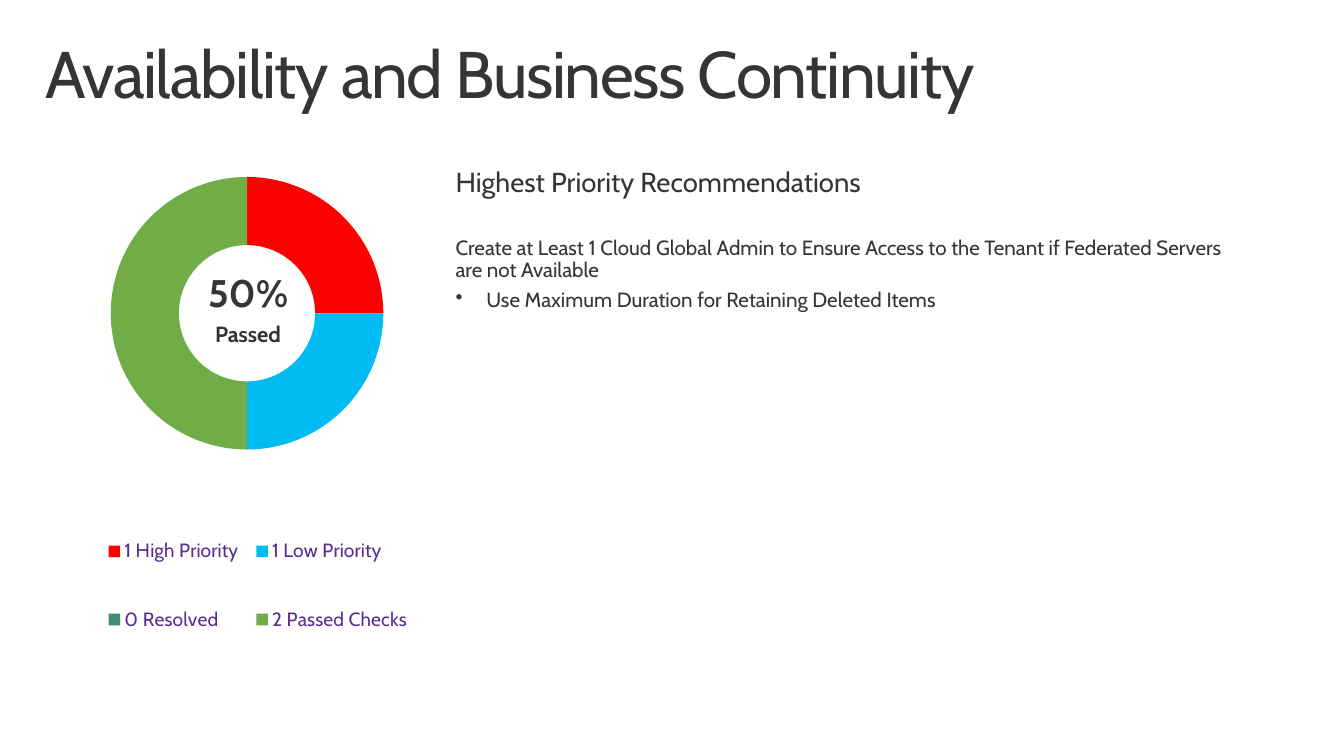
import pptx
import pptx.chart.data
import pptx.dml.color
import pptx.enum.chart
import pptx.enum.text
import pptx.oxml
import pptx.oxml.ns
import pptx.util

Cm = pptx.util.Cm
Pt = pptx.util.Pt
ALIGN = pptx.enum.text.PP_ALIGN

THEME = {
    "font": "Cabin",
    "text": "353535",
    "legend": "5B2D91",
    "slices": ["FF0000", "001D49", "00BCF2", "A3008F", "458B74", "D1D1D1", "70AD47"],
    "title_size": 48,
    "percent_size": 28,
    "heading_size": 20,
    "passed_size": 16,
    "body_size": 15,
    "legend_size": 14,
    "chart_size": 10,
}


def rgb(value):
    return pptx.dml.color.RGBColor.from_string(value)


def write_paragraph(frame, text, size, bold=False, align=ALIGN.LEFT, after=6, spacing=0, bullet=False):
    paragraph = frame.paragraphs[-1]
    if paragraph.runs:
        paragraph = frame.add_paragraph()
    paragraph.alignment = align
    paragraph.line_spacing = 0.9
    paragraph.space_before = Pt(0)
    paragraph.space_after = Pt(after)
    run = paragraph.add_run()
    run.text = text
    run.font.name = THEME["font"]
    run.font.size = Pt(size)
    run.font.bold = bold
    run.font.color.rgb = rgb(THEME["text"])
    if spacing:
        run.font._element.set("spc", str(spacing))
    if bullet:
        properties = paragraph._p.get_or_add_pPr()
        properties.set("marL", str(Cm(0.79)))
        properties.set("indent", str(-Cm(0.79)))
        mark = properties.makeelement(pptx.oxml.ns.qn("a:buChar"), {"char": "•"})
        properties.append(mark)


presentation = pptx.Presentation()
presentation.slide_width = Cm(34.54)
presentation.slide_height = Cm(19.43)
slide = presentation.slides.add_slide(presentation.slide_layouts[5])

title = slide.shapes.title
title.left, title.top, title.width, title.height = Cm(0.76), Cm(0.81), Cm(33.02), Cm(2.54)
title_frame = title.text_frame
title_frame.margin_left = title_frame.margin_right = Cm(0.41)
title_frame.margin_top = title_frame.margin_bottom = Cm(0.25)
title_frame.vertical_anchor = pptx.enum.text.MSO_ANCHOR.TOP
title_frame.auto_size = pptx.enum.text.MSO_AUTO_SIZE.NONE
write_paragraph(title_frame, "Availability and Business Continuity",
                size=THEME["title_size"], after=0, spacing=-100)

chart_data = pptx.chart.data.CategoryChartData()
chart_data.categories = ["1 High Priority ", "", "1 Low Priority", "", "0 Resolved", "", "2 Passed Checks"]
chart_data.add_series("Series 1", [25, None, 25, None, 0, None, 50])
chart = slide.shapes.add_chart(
    pptx.enum.chart.XL_CHART_TYPE.DOUGHNUT,
    Cm(0), Cm(2.79), Cm(12.27), Cm(14.91), chart_data).chart
chart.has_title = False
chart.font.name = THEME["font"]
chart.font.size = Pt(THEME["chart_size"])
chart.font.color.rgb = rgb(THEME["text"])

for index, color in enumerate(THEME["slices"]):
    point_format = chart.plots[0].series[0].points[index].format
    point_format.fill.solid()
    point_format.fill.fore_color.rgb = rgb(color)
    point_format.line.fill.background()
chart._chartSpace.find(".//" + pptx.oxml.ns.qn("c:holeSize")).set("val", "68")

chart.has_legend = True
legend = chart.legend
legend.position = pptx.enum.chart.XL_LEGEND_POSITION.BOTTOM
legend.include_in_layout = False
legend.font.name = THEME["font"]
legend.font.size = Pt(THEME["legend_size"])
legend.font.color.rgb = rgb(THEME["legend"])

namespace = pptx.oxml.ns.nsdecls("c")
legend_position = legend._element.find(pptx.oxml.ns.qn("c:legendPos"))
for index in (5, 3, 1):
    legend_position.addnext(pptx.oxml.parse_xml(
        f'<c:legendEntry {namespace}><c:idx val="{index}"/><c:delete val="1"/></c:legendEntry>'))

plot_area = chart._chartSpace.chart.plotArea
layouts = [
    (plot_area, 0, '<c:layoutTarget val="inner"/>', (0.232, 0.074, 0.571, 0.558)),
    (legend._element, 4, "", (0.213, 0.666, 0.655, 0.312)),
]
for parent, position, target, (x, y, width, height) in layouts:
    for old_layout in parent.findall(pptx.oxml.ns.qn("c:layout")):
        parent.remove(old_layout)
    parent.insert(position, pptx.oxml.parse_xml(
        f'<c:layout {namespace}><c:manualLayout>{target}'
        f'<c:xMode val="edge"/><c:yMode val="edge"/>'
        f'<c:x val="{x}"/><c:y val="{y}"/><c:w val="{width}"/><c:h val="{height}"/>'
        f'</c:manualLayout></c:layout>'))

text_frames = []
for left, top, width, height in [(4.57, 6.63, 3.61, 8.1), (11.2, 3.94, 21.36, 3.18)]:
    frame = slide.shapes.add_textbox(Cm(left), Cm(top), Cm(width), Cm(height)).text_frame
    frame.word_wrap = True
    frame.margin_left = frame.margin_right = Cm(0.51)
    frame.margin_top = frame.margin_bottom = Cm(0.41)
    text_frames.append(frame)
score_frame, advice_frame = text_frames

write_paragraph(score_frame, "50%", size=THEME["percent_size"], bold=True, align=ALIGN.CENTER)
write_paragraph(score_frame, "Passed", size=THEME["passed_size"], bold=True, align=ALIGN.CENTER)

write_paragraph(advice_frame, "Highest Priority Recommendations", size=THEME["heading_size"], after=28)
write_paragraph(advice_frame,
                "Create at Least 1 Cloud Global Admin to Ensure Access to the Tenant "
                "if Federated Servers are not Available",
                size=THEME["body_size"])
write_paragraph(advice_frame, "Use Maximum Duration for Retaining Deleted Items",
                size=THEME["body_size"], bullet=True)

presentation.save("out.pptx")
